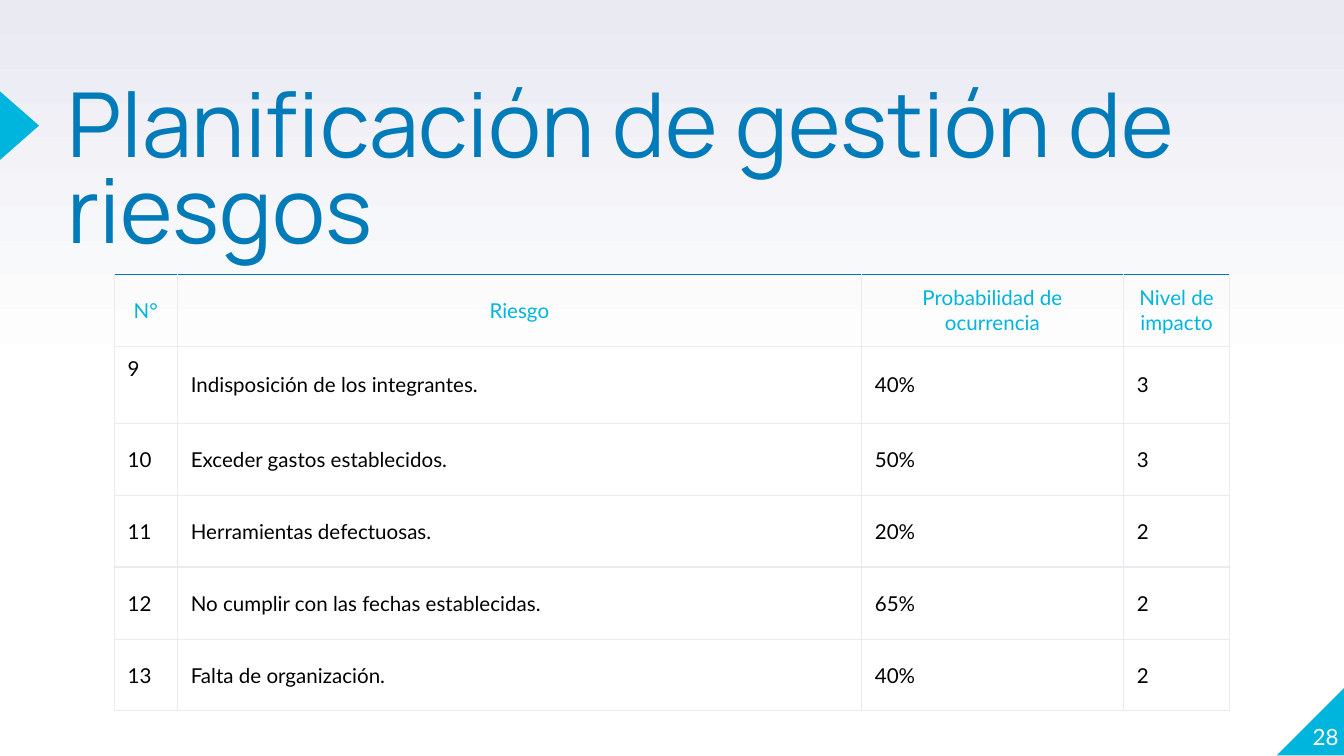
from copy import deepcopy
from lxml import etree
from pptx import Presentation
from pptx import util as u
from pptx.dml.color import RGBColor
from pptx.enum import shapes, text
from pptx.oxml.ns import qn

SLIDE_WIDTH = u.Inches(10)
SLIDE_HEIGHT = SLIDE_WIDTH * 9 // 16
TITLE = "Planificación de gestión de riesgos"
PAGE = "28"
HEADER = ("N°", "Riesgo", "Probabilidad de ocurrencia", "Nivel de impacto")
RISKS = [
    ("9", "Indisposición de los integrantes.", "40%", "3"),
    ("10", "Exceder gastos establecidos.", "50%", "3"),
    ("11", "Herramientas defectuosas.", "20%", "2"),
    ("12", "No cumplir con las fechas establecidas.", "65%", "2"),
    ("13", "Falta de organización.", "40%", "2"),
]
COLUMN_WIDTHS = (0.47, 5.09, 1.95, 0.79)
ROW_HEIGHTS = (0.54, 0.57, 0.54, 0.53, 0.54, 0.53)
TABLE_LEFT, TABLE_TOP = 0.85, 2.04
BACKGROUND_STOPS = ((0, "FFFFFF"), (0.5, "FFFFFF"), (1, "E9EAF2"))
THEME = {
    "accent": "00B5DD", "title": "007BB9", "body": "000000",
    "light": "FFFFFF", "grid": "E9EAF2",
    "title_font": "Manrope", "body_font": "Lato",
    "title_size": 48, "page_size": 12, "table_size": 11, "border": 0.75,
}


def apply(target, values):
    for name, value in values.items():
        setattr(target, name, value)


def inches(*values):
    return [u.Inches(value) for value in values]


def write(frame, content, color, size, font, alignment, anchor, line_spacing=None):
    apply(frame, {"word_wrap": True, "vertical_anchor": anchor})
    paragraph = frame.paragraphs[0]
    apply(paragraph, {"alignment": alignment, "line_spacing": line_spacing})
    run = paragraph.add_run()
    run.text = content
    apply(run.font, {"name": THEME[font], "size": u.Pt(THEME[size]), "bold": False})
    run.font.color.rgb = RGBColor.from_string(THEME[color])


def clear_margins(frame):
    apply(frame, dict.fromkeys(
        ("margin_left", "margin_top", "margin_right", "margin_bottom"), 0))


def paint_background(slide):
    fill = slide.background.fill
    fill.gradient()
    fill.gradient_angle = 90
    stop_list = next(slide.element.iter(qn("a:gsLst")))
    stop_list.insert(1, deepcopy(stop_list[0]))
    for stop, (position, color) in zip(fill.gradient_stops, BACKGROUND_STOPS):
        stop.position = position
        stop.color.rgb = RGBColor.from_string(color)


def add_marker(slide, kind, box):
    shape = slide.shapes.add_shape(kind, *inches(*box))
    shape.shadow.inherit = False
    shape.fill.solid()
    shape.fill.fore_color.rgb = RGBColor.from_string(THEME["accent"])
    shape.line.fill.background()
    return shape


def set_borders(cell, top):
    properties = cell._tc.get_or_add_tcPr()
    for side, color in (("L", "grid"), ("R", "grid"), ("T", top), ("B", "grid")):
        line = etree.SubElement(properties, qn(f"a:ln{side}"),
                                w=str(u.Pt(THEME["border"])))
        solid = etree.SubElement(line, qn("a:solidFill"))
        etree.SubElement(solid, qn("a:srgbClr"), val=THEME[color])


def add_risk_table(slide):
    rows = [HEADER, *RISKS]
    frame = slide.shapes.add_table(
        len(rows), len(HEADER),
        *inches(TABLE_LEFT, TABLE_TOP, sum(COLUMN_WIDTHS), sum(ROW_HEIGHTS)))
    table = frame.table
    apply(table, {"first_row": False, "horz_banding": False})
    for column, width in zip(table.columns, COLUMN_WIDTHS):
        column.width = u.Inches(width)
    for row, height in zip(table.rows, ROW_HEIGHTS):
        row.height = u.Inches(height)
    for row_index, values in enumerate(rows):
        is_header = row_index == 0
        for column_index, value in enumerate(values):
            cell = table.cell(row_index, column_index)
            is_first_number = (row_index, column_index) == (1, 0)
            anchor = text.MSO_ANCHOR.TOP if is_first_number else text.MSO_ANCHOR.MIDDLE
            apply(cell, {
                "margin_left": u.Inches(0.1), "margin_right": u.Inches(0.1),
                "margin_top": u.Inches(0.07), "margin_bottom": u.Inches(0.07),
                "vertical_anchor": anchor,
            })
            set_borders(cell, "title" if is_header else "grid")
            cell.fill.background()
            write(cell.text_frame, value, "accent" if is_header else "body",
                  "table_size", "body_font",
                  text.PP_ALIGN.CENTER if is_header else text.PP_ALIGN.JUSTIFY, None)


def main():
    presentation = Presentation()
    apply(presentation, {"slide_width": SLIDE_WIDTH, "slide_height": SLIDE_HEIGHT})
    slide = presentation.slides.add_slide(presentation.slide_layouts[5])
    paint_background(slide)

    corner = add_marker(slide, shapes.MSO_SHAPE.RIGHT_TRIANGLE, (9.5, 5.11, 0.51, 0.51))
    corner.element.spPr.xfrm.set("flipH", "1")
    pointer = add_marker(slide, shapes.MSO_SHAPE.ISOSCELES_TRIANGLE,
                         (-0.11, 0.79, 0.51, 0.29))
    pointer.rotation = 90

    title = slide.shapes.title
    apply(title, dict(zip(("left", "top", "width", "height"),
                          inches(0.5, 0.66, 9.28, 1.18))))
    clear_margins(title.text_frame)
    title.text_frame.auto_size = text.MSO_AUTO_SIZE.NONE
    write(title.text_frame, TITLE, "title", "title_size", "title_font",
          text.PP_ALIGN.LEFT, text.MSO_ANCHOR.TOP, 0.8)

    page = slide.shapes.add_textbox(*inches(9.46, 5.07, 0.5, 0.51))
    clear_margins(page.text_frame)
    write(page.text_frame, PAGE, "light", "page_size", "body_font",
          text.PP_ALIGN.RIGHT, text.MSO_ANCHOR.BOTTOM)

    add_risk_table(slide)
    presentation.save("out.pptx")


if __name__ == "__main__":
    main()
